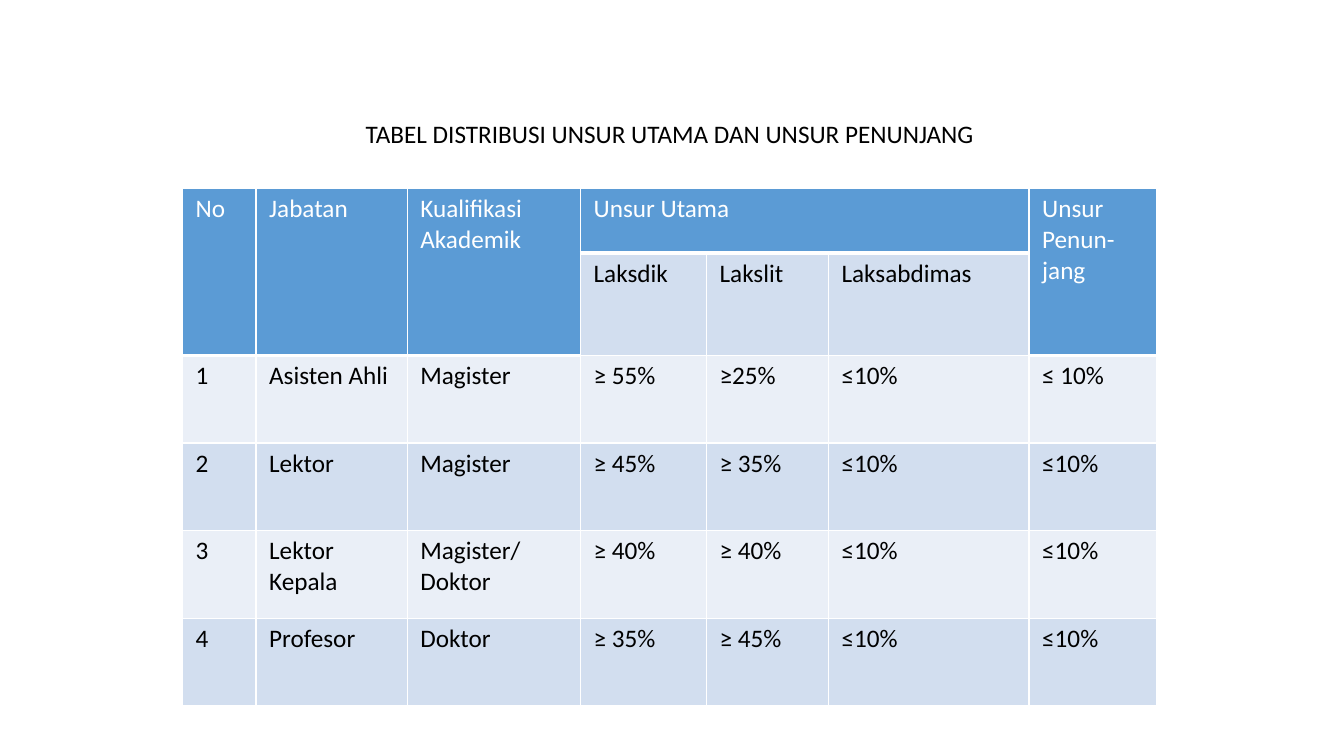
import pptx
import pptx.dml.color
import pptx.enum.text
import pptx.oxml
import pptx.oxml.ns
import pptx.util

FONT = "Calibri"
WHITE, BLACK = "FFFFFF", "000000"
HEADER_BLUE, BAND_DARK, BAND_LIGHT = "5B9BD5", "D2DEEF", "EAEFF7"

COLUMN_WIDTHS = [52.6, 108, 123.8, 90, 87.1, 143.3, 91.4]
ROW_HEIGHTS = [46, 46, 62.6, 62.6, 62.6, 62.6]
ROWS = [
    ["No", "Jabatan", "Kualifikasi\nAkademik", "Unsur Utama", "", "", "Unsur\nPenun-jang"],
    ["", "", "", "Laksdik", "Lakslit", "Laksabdimas", ""],
    ["1", "Asisten Ahli", "Magister", "≥ 55%", "≥25%", "≤10%", "≤ 10%"],
    ["2", "Lektor", "Magister", "≥ 45%", "≥ 35%", "≤10%", "≤10%"],
    ["3", "Lektor\nKepala", "Magister/\nDoktor", "≥ 40%", "≥ 40%", "≤10%", "≤10%"],
    ["4", "Profesor", "Doktor", "≥ 35%", "≥ 45%", "≤10%", "≤10%"],
]
TALL_HEADERS = [0, 1, 2, 6]


def color(value):
    """Turn a hex string into a colour."""
    return pptx.dml.color.RGBColor.from_string(value)


def style_text(text_frame, text_color):
    """Give every paragraph the slide's font, size and a colour."""
    for paragraph in text_frame.paragraphs:
        paragraph.font.name = FONT
        paragraph.font.size = pptx.util.Pt(18)
        paragraph.font.bold = False
        paragraph.font.color.rgb = color(text_color)


def add_border(cell, side, width):
    """Draw a white border on one side of a cell."""
    line = pptx.oxml.parse_xml(
        f'<a:{side} {pptx.oxml.ns.nsdecls("a")} w="{pptx.util.Pt(width)}">'
        f'<a:solidFill><a:srgbClr val="{WHITE}"/></a:solidFill></a:{side}>'
    )
    cell._tc.get_or_add_tcPr().append(line)


def format_cell(cell, text, fill, text_color, bottom_width):
    """Fill a cell with text, borders and a background."""
    cell.text = text
    cell.margin_left = cell.margin_right = pptx.util.Pt(9.4)
    cell.margin_top = cell.margin_bottom = pptx.util.Pt(3.6)
    style_text(cell.text_frame, text_color)
    for side, width in (("lnL", 1), ("lnR", 1), ("lnT", 1), ("lnB", bottom_width)):
        add_border(cell, side, width)
    cell.fill.solid()
    cell.fill.fore_color.rgb = color(fill)


def add_title(slide, text):
    """Place the centred title above the table."""
    title = slide.shapes.title
    title.left, title.top = pptx.util.Pt(130.3), pptx.util.Pt(80.6)
    title.width, title.height = pptx.util.Pt(696.2), pptx.util.Pt(29)
    title.text = text
    text_frame = title.text_frame
    text_frame.word_wrap = True
    text_frame.auto_size = pptx.enum.text.MSO_AUTO_SIZE.NONE
    text_frame.vertical_anchor = pptx.enum.text.MSO_ANCHOR.MIDDLE
    text_frame.paragraphs[0].alignment = pptx.enum.text.PP_ALIGN.CENTER
    text_frame.paragraphs[0].line_spacing = 1
    style_text(text_frame, BLACK)


def add_distribution_table(slide):
    """Add the table with its two-level header and banded rows."""
    table = slide.shapes.add_table(
        len(ROWS), len(COLUMN_WIDTHS), pptx.util.Pt(130.3), pptx.util.Pt(134.8),
        pptx.util.Pt(sum(COLUMN_WIDTHS)), pptx.util.Pt(sum(ROW_HEIGHTS)),
    ).table
    table.first_row = table.horz_banding = False
    for column, width in zip(table.columns, COLUMN_WIDTHS):
        column.width = pptx.util.Pt(width)
    for row, height in zip(table.rows, ROW_HEIGHTS):
        row.height = pptx.util.Pt(height)

    for row_index, texts in enumerate(ROWS):
        band = BAND_DARK if row_index % 2 else BAND_LIGHT
        for column_index, text in enumerate(texts):
            is_header = row_index == 0 or (row_index == 1 and column_index in TALL_HEADERS)
            look = (HEADER_BLUE, WHITE, 3) if is_header else (band, BLACK, 1)
            format_cell(table.cell(row_index, column_index), text, *look)

    for column_index in TALL_HEADERS:
        table.cell(0, column_index).merge(table.cell(1, column_index))
    table.cell(0, 3).merge(table.cell(0, 5))


def main():
    """Build and save the slide."""
    presentation = pptx.Presentation()
    presentation.slide_width = pptx.util.Pt(960)
    presentation.slide_height = pptx.util.Pt(540)
    slide = presentation.slides.add_slide(presentation.slide_layouts[5])
    add_title(slide, "TABEL DISTRIBUSI UNSUR UTAMA DAN UNSUR PENUNJANG")
    add_distribution_table(slide)
    presentation.save("out.pptx")


if __name__ == "__main__":
    main()
